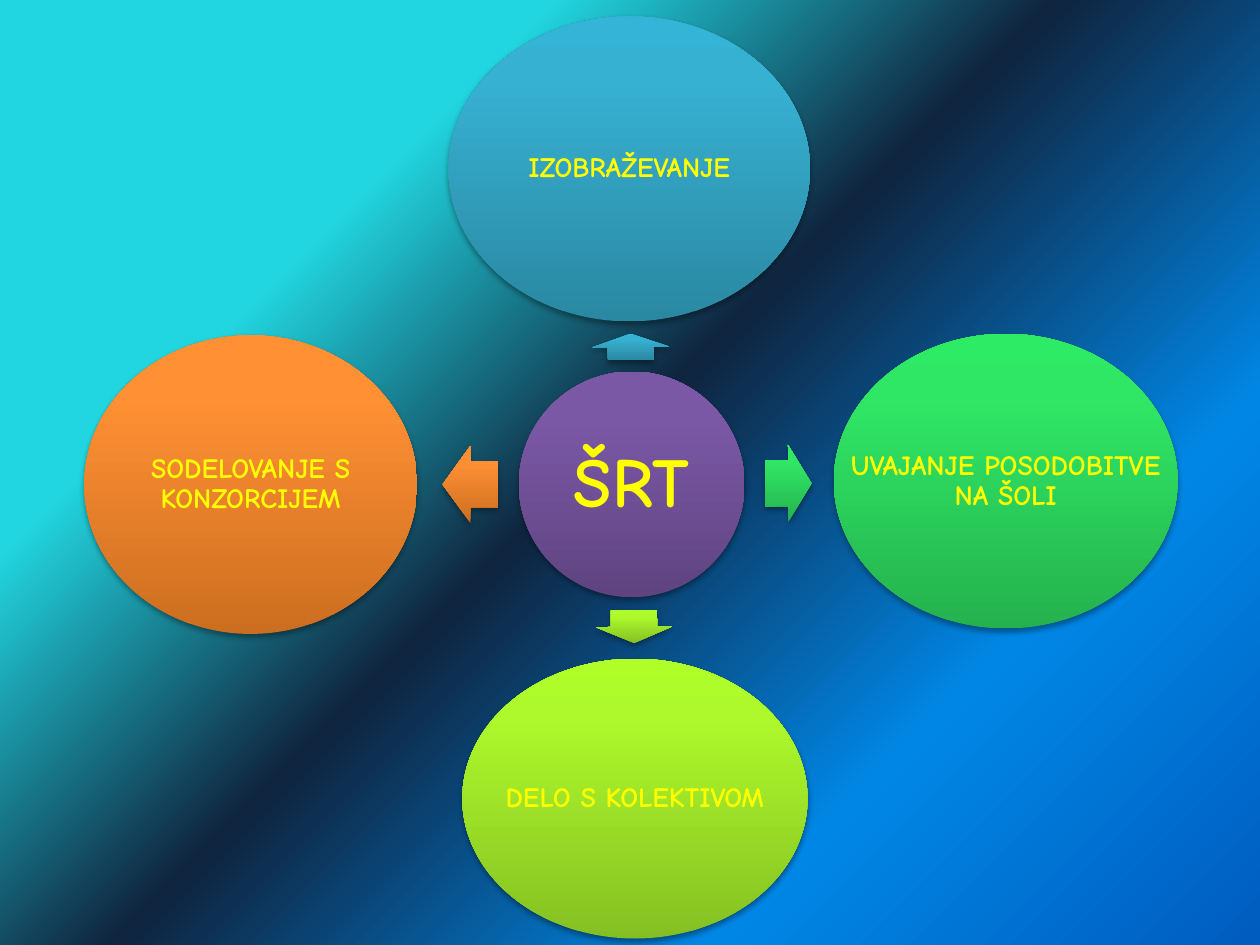
"""Build the ŠRT slide: a central hub with four topics around it."""
from dataclasses import dataclass

from lxml.etree import SubElement
from pptx import Presentation
from pptx.dml.color import RGBColor
from pptx.enum.shapes import MSO_SHAPE as Preset
from pptx.enum.text import MSO_ANCHOR as Anchor, MSO_AUTO_SIZE as AutoSize, PP_ALIGN as Align
from pptx.oxml.ns import qn
from pptx.shapes.base import BaseShape
from pptx.shapes.shapetree import GroupShapes
from pptx.text.text import TextFrame
from pptx.util import Cm, Pt

FONT = "Comic Neue"
YELLOW = RGBColor(0xFF, 0xFF, 0x00)
BLACK = RGBColor(0x00, 0x00, 0x00)
CYAN = RGBColor(0x21, 0xD6, 0xE0)
NAVY = RGBColor(0x0F, 0x24, 0x3E)
AZURE = RGBColor(0x00, 0x87, 0xE6)
COBALT = RGBColor(0x00, 0x5C, 0xBF)
PURPLES = RGBColor(0x5F, 0x44, 0x80), RGBColor(0x7B, 0x58, 0xA6), RGBColor(0x7C, 0x57, 0xA8)
BLUES = RGBColor(0x2A, 0x88, 0xA2), RGBColor(0x37, 0xB1, 0xD2), RGBColor(0x34, 0xB4, 0xD6)
GREENS = RGBColor(0x25, 0xB2, 0x4E), RGBColor(0x30, 0xE7, 0x65), RGBColor(0x2D, 0xEB, 0x64)
LIMES = RGBColor(0x85, 0xC0, 0x22), RGBColor(0xAD, 0xF9, 0x2C), RGBColor(0xAF, 0xFE, 0x28)
ORANGES = RGBColor(0xCC, 0x6E, 0x20), RGBColor(0xFF, 0x90, 0x34), RGBColor(0xFF, 0x91, 0x36)

Colours = tuple[RGBColor, ...]


@dataclass(frozen=True)
class Area:
    left: float
    top: float
    width: float
    height: float

    def place(self) -> tuple[Cm, Cm, Cm, Cm]:
        return Cm(self.left), Cm(self.top), Cm(self.width), Cm(self.height)


@dataclass(frozen=True)
class Topic:
    label: str
    circle: Area
    arrow: Area
    rotation: float
    colours: Colours


HUB = Area(10.46, 7.49, 4.55, 4.55)
TOPICS = (
    Topic("IZOBRAŽEVANJE", Area(9.04, 0.33, 7.29, 6.15),
          Area(12.45, 6.22, 0.53, 1.55), 269.4, BLUES),
    Topic("UVAJANJE POSODOBITVE NA ŠOLI", Area(16.81, 6.73, 6.93, 5.94),
          Area(15.42, 8.97, 0.94, 1.55), 359.7, GREENS),
    Topic("DELO S KOLEKTIVOM", Area(9.32, 13.28, 6.96, 5.64),
          Area(12.45, 11.86, 0.66, 1.55), 89.4, LIMES),
    Topic("SODELOVANJE S KONZORCIJEM", Area(1.7, 6.76, 6.71, 6.02),
          Area(8.92, 8.99, 1.12, 1.55), 180, ORANGES),
)


def set_gradient(element, stops: dict[int, RGBColor], angle: int) -> None:
    gradient = element.find(".//" + qn("a:gradFill"))
    for child in list(gradient):
        gradient.remove(child)
    gradient.set("rotWithShape", "0")
    stop_list = SubElement(gradient, qn("a:gsLst"))
    for percent, colour in stops.items():
        stop = SubElement(stop_list, qn("a:gs"), pos=str(percent * 1000))
        SubElement(stop, qn("a:srgbClr"), val=str(colour))
    SubElement(gradient, qn("a:lin"), ang=str(angle * 60000), scaled="0")


def add_shadow(shape: BaseShape) -> None:
    shape.shadow.inherit = False
    effects = shape.element.find(".//" + qn("a:effectLst"))
    shadow = SubElement(effects, qn("a:outerShdw"), blurRad="40000", dist="23000",
                        dir="5400000", rotWithShape="0")
    colour = SubElement(shadow, qn("a:srgbClr"), val=str(BLACK))
    SubElement(colour, qn("a:alpha"), val="35000")


def add_glossy(shapes: GroupShapes, preset: Preset, area: Area, colours: Colours) -> BaseShape:
    shape = shapes.add_shape(preset, *area.place())
    shape.line.fill.background()
    shape.fill.gradient()
    set_gradient(shape.element, dict(zip((0, 80, 100), colours)), 270)
    add_shadow(shape)
    return shape


def write_label(frame: TextFrame, label: str, size: int, inset: float) -> None:
    frame.word_wrap = True
    frame.auto_size = AutoSize.NONE
    frame.vertical_anchor = Anchor.MIDDLE
    frame.margin_left = frame.margin_right = Cm(inset)
    frame.margin_top = frame.margin_bottom = Cm(inset)
    para = frame.paragraphs[0]
    para.alignment = Align.CENTER
    para.line_spacing = 0.9
    span = para.add_run()
    span.text = label
    span.font.name = FONT
    span.font.size = Pt(size)
    span.font.bold = True
    span.font.color.rgb = YELLOW


def add_topic(shapes: GroupShapes, topic: Topic) -> None:
    arrow = add_glossy(shapes, Preset.RIGHT_ARROW, topic.arrow, topic.colours)
    arrow.adjustments[0] = 0.6
    arrow.adjustments[1] = 0.5
    arrow.rotation = topic.rotation
    add_glossy(shapes, Preset.OVAL, topic.circle, topic.colours)
    box = shapes.add_textbox(*topic.circle.place())
    write_label(box.text_frame, topic.label, 16, 0.05)


def main() -> None:
    deck = Presentation()
    deck.slide_width, deck.slide_height = Cm(25.4), Cm(19.05)
    page = deck.slides.add_slide(deck.slide_layouts.get_by_name("Title Only"))
    page.background.fill.gradient()
    set_gradient(page.element, {25: CYAN, 48: NAVY, 75: AZURE, 100: COBALT}, 45)

    diagram = page.shapes.add_group_shape().shapes
    add_glossy(diagram, Preset.OVAL, HUB, PURPLES)
    for topic in TOPICS:
        add_topic(diagram, topic)

    title = page.shapes.title
    title.left, title.top, title.width, title.height = HUB.place()
    write_label(title.text_frame, "ŠRT", 40, 0.15)
    title.element.getparent().append(title.element)
    deck.save("out.pptx")


if __name__ == "__main__":
    main()
